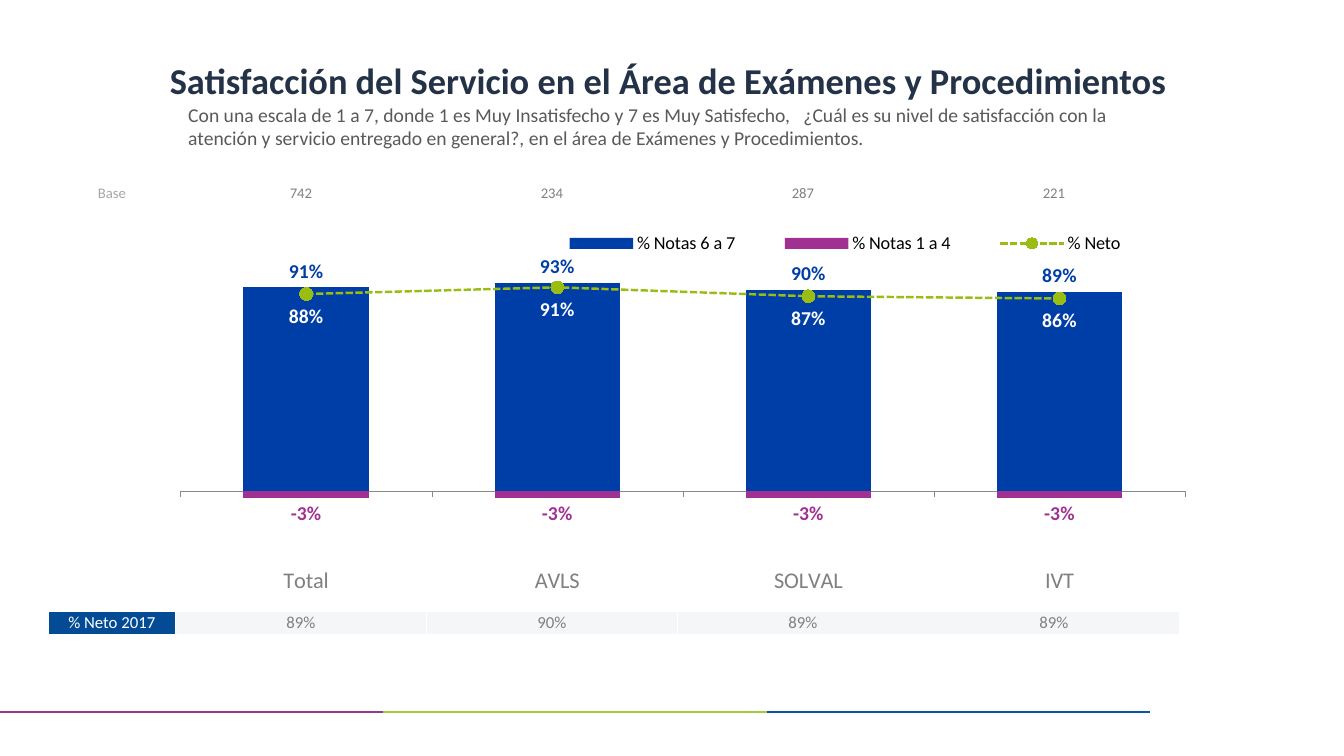
from lxml.etree import SubElement
from pptx import Presentation
from pptx.chart.data import CategoryChartData
from pptx.dml.color import RGBColor
from pptx.enum.chart import (
    XL_CHART_TYPE as ChartType, XL_LABEL_POSITION as LabelPos, XL_LEGEND_POSITION as LegendPos,
    XL_MARKER_STYLE as Marker, XL_TICK_LABEL_POSITION as TickLabel, XL_TICK_MARK as Tick)
from pptx.enum.dml import MSO_LINE as Dash
from pptx.enum.shapes import MSO_CONNECTOR as Connector
from pptx.enum.text import MSO_ANCHOR as Anchor, PP_ALIGN as Align
from pptx.oxml import parse_xml
from pptx.oxml.ns import nsdecls, qn
from pptx.util import Pt

TITLE = "Satisfacción del Servicio en el Área de Exámenes y Procedimientos"
QUESTION = ("Con una escala de 1 a 7, donde 1 es Muy Insatisfecho y 7 es Muy Satisfecho,   "
            "¿Cuál es su nivel de satisfacción con la atención y servicio entregado en general?, "
            "en el área de Exámenes y Procedimientos.")
INSTITUTIONS = ["Total", "AVLS", "SOLVAL", "IVT"]
SCORES = {
    "% Notas 6 a 7": (0.91, 0.93, 0.90, 0.89),
    "% Notas 1 a 4": (-0.03, -0.03, -0.03, -0.03),
    "% Neto": (0.88, 0.91, 0.87, 0.86),
}
BASE = ["Base", "742", "234", "287", "221"]
NETO_2017 = ["% Neto 2017", "89%", "90%", "89%", "89%"]

THEME = {
    "font": "Calibri",
    "title": "233247", "question": "595959", "value": "808080", "base": "A6A6A6",
    "high": "003EA7", "low": "A03192", "neto": "99BD13", "axis": "898989",
    "head": "044B95", "band": "F5F6F8", "white": "FFFFFF", "black": "000000",
    "footer": ("963791", "A2CD3A", "0B56A4"),
    "title_size": 26, "category_size": 16, "text_size": 14, "legend_size": 13,
    "neto_size": 12, "base_size": 10.5,
}
TABLE_LEFT, HEAD_WIDTH, VALUE_WIDTH, ROW_HEIGHT = 34.6, 90.7, 179.3, 17
FOOTER_TOP, FOOTER_LENGTH = 508.3, 273.8


def color(name):
    return RGBColor.from_string(THEME.get(name, name))


def style(font, size, name, bold=False):
    font.name = THEME["font"]
    font.size = Pt(THEME[size])
    font.bold = bold
    font.color.rgb = color(name)


def add_text(slide, text, box, size, name, bold=False):
    frame = slide.shapes.add_textbox(*map(Pt, box)).text_frame
    frame.word_wrap = True
    frame.text = text
    style(frame.paragraphs[0].runs[0].font, size, name, bold)
    return frame


def add_footer(slide):
    for position, shade in enumerate(THEME["footer"]):
        start = position * FOOTER_LENGTH
        rule = slide.shapes.add_connector(Connector.STRAIGHT, Pt(start), Pt(FOOTER_TOP),
                                          Pt(start + FOOTER_LENGTH), Pt(FOOTER_TOP))
        rule.line.color.rgb = color(shade)
        rule.line.width = Pt(1.5)
        SubElement(rule._element.spPr, qn("a:effectLst"))


def add_borders(cell, hidden):
    properties = cell._tc.get_or_add_tcPr()
    for side in "LRTB":
        edge = SubElement(properties, qn(f"a:ln{side}"), w=str(Pt(0.5)))
        if side == hidden:
            SubElement(edge, qn("a:noFill"))
        else:
            fill = SubElement(edge, qn("a:solidFill"))
            SubElement(fill, qn("a:srgbClr"), val=THEME["white"])


def add_row(slide, entries, top, size, head_color, head_fill=None, value_fill=None):
    count = len(entries)
    width = HEAD_WIDTH + (count - 1) * VALUE_WIDTH
    table = slide.shapes.add_table(1, count, Pt(TABLE_LEFT), Pt(top), Pt(width), Pt(ROW_HEIGHT)).table
    table.first_row = table.horz_banding = False
    table.rows[0].height = Pt(ROW_HEIGHT)
    hidden_sides = {count - 2: "R", count - 1: "L"}
    for column, entry in enumerate(entries):
        table.columns[column].width = Pt(VALUE_WIDTH if column else HEAD_WIDTH)
        cell = table.cell(0, column)
        cell.text = entry
        cell.vertical_anchor = Anchor.MIDDLE
        cell.margin_left = cell.margin_right = cell.margin_top = Pt(0.7)
        cell.margin_bottom = 0
        line = cell.text_frame.paragraphs[0]
        line.alignment = Align.CENTER
        style(line.runs[0].font, size, "value" if column else head_color)
        add_borders(cell, hidden_sides.get(column))
        shade = value_fill if column else head_fill
        if shade:
            cell.fill.solid()
            cell.fill.fore_color.rgb = color(shade)
        else:
            cell.fill.background()


def move_to_line(chart):
    columns = chart._chartSpace.find(".//" + qn("c:barChart"))
    neto = columns.findall(qn("c:ser"))[-1]
    for flag in neto.findall(qn("c:invertIfNegative")):
        neto.remove(flag)
    lines = parse_xml(f'<c:lineChart {nsdecls("c")}><c:grouping val="standard"/>'
                      '<c:varyColors val="0"/><c:marker val="1"/></c:lineChart>')
    lines.insert(2, neto)
    for axis in columns.findall(qn("c:axId")):
        SubElement(lines, qn("c:axId"), val=axis.get("val"))
    columns.addnext(lines)


def set_layout(parent, before, box, inner=False):
    for old in parent.findall(qn("c:layout")):
        parent.remove(old)
    target = '<c:layoutTarget val="inner"/>' if inner else ""
    modes = "".join(f'<c:{key}Mode val="edge"/>' for key in "xy")
    sizes = "".join(f'<c:{key} val="{value}"/>' for key, value in zip("xywh", box))
    layout = parse_xml(f'<c:layout {nsdecls("c")}><c:manualLayout>{target}{modes}{sizes}'
                       '</c:manualLayout></c:layout>')
    if before is None:
        parent.insert(0, layout)
    else:
        before.addprevious(layout)


def add_labels(series, name, position):
    labels = series.data_labels
    labels.show_value = True
    labels.number_format = "0%"
    labels.number_format_is_linked = False
    labels.position = position
    style(labels.font, "text_size", name, True)


def add_scores(slide):
    scores = CategoryChartData(number_format="0%")
    scores.categories = INSTITUTIONS
    for name, values in SCORES.items():
        scores.add_series(name, values)
    chart = slide.shapes.add_chart(ChartType.COLUMN_CLUSTERED, Pt(106.6), Pt(153.4),
                                   Pt(747.4), Pt(340.6), scores).chart
    chart.has_title = False
    style(chart.font, "legend_size", "black")
    plot = chart.plots[0]
    plot.gap_width = plot.overlap = 100
    plot.vary_by_categories = False
    move_to_line(chart)

    high, low, neto = chart.series
    for series, name in ((high, "high"), (low, "low")):
        series.invert_if_negative = False
        series.format.fill.solid()
        series.format.fill.fore_color.rgb = color(name)
        add_labels(series, name, LabelPos.OUTSIDE_END)
    neto.smooth = False
    neto.format.line.color.rgb = color("neto")
    neto.format.line.width = Pt(1.75)
    neto.format.line.dash_style = Dash.SQUARE_DOT
    neto.marker.style = Marker.CIRCLE
    neto.marker.size = 9
    neto.marker.format.fill.solid()
    neto.marker.format.fill.fore_color.rgb = color("neto")
    neto.marker.format.line.color.rgb = color("neto")
    add_labels(neto, "white", LabelPos.BELOW)

    institutions, percent = chart.category_axis, chart.value_axis
    institutions.tick_label_position = TickLabel.LOW
    institutions.major_tick_mark = Tick.OUTSIDE
    institutions.format.line.color.rgb = color("axis")
    institutions.format.line.width = Pt(0.25)
    style(institutions.tick_labels.font, "category_size", "value")
    percent.minimum_scale, percent.maximum_scale, percent.major_unit = -0.3, 1, 0.2
    percent.has_major_gridlines = False
    percent.tick_label_position = TickLabel.NONE
    percent.major_tick_mark = Tick.NONE
    percent.format.line.fill.background()

    chart.has_legend = True
    legend = chart.legend
    legend.position = LegendPos.TOP
    legend.include_in_layout = False
    style(legend.font, "legend_size", "black")
    set_layout(legend._element, legend._element.find(qn("c:overlay")), (0.36, 0.03, 0.61, 0.06))
    set_layout(chart._chartSpace.chart.plotArea, None, (0.03, 0.11, 0.96, 0.61), True)


def main():
    deck = Presentation()
    deck.slide_width, deck.slide_height = Pt(960), Pt(540)
    slide = deck.slides.add_slide(deck.slide_layouts[6])
    add_footer(slide)
    title = add_text(slide, TITLE, (89.3, 38.9, 776.9, 40.3), "title_size", "title", True)
    title.vertical_anchor = Anchor.MIDDLE
    title.paragraphs[0].alignment = Align.CENTER
    title.paragraphs[0].line_spacing = 0.9
    add_text(slide, QUESTION, (127.4, 69.8, 710.6, 41), "text_size", "question")
    add_scores(slide)
    add_row(slide, NETO_2017, 436.3, "neto_size", "white", "head", "band")
    add_row(slide, BASE, 129.6, "base_size", "base")
    deck.save("out.pptx")


if __name__ == "__main__":
    main()
